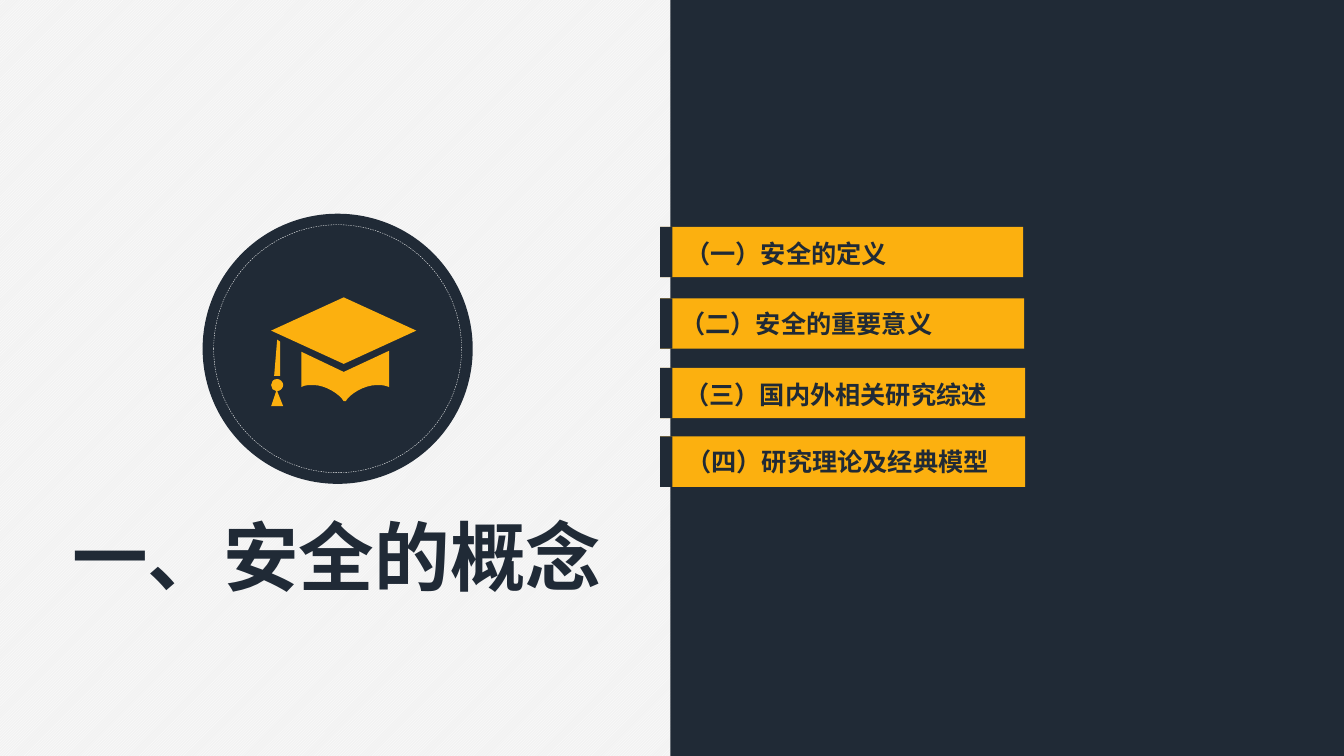
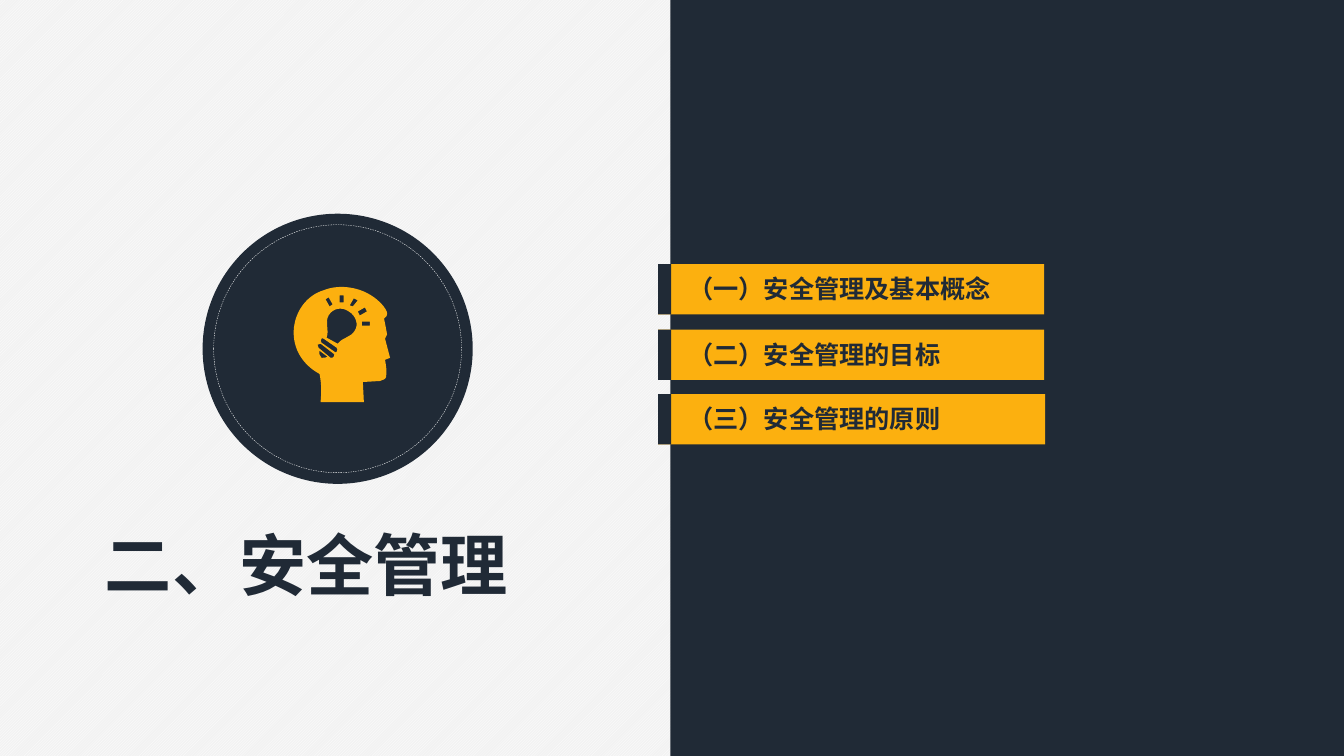
from lxml import etree
from pptx import Presentation
from pptx.dml.color import RGBColor
from pptx.enum.dml import MSO_LINE, MSO_PATTERN
from pptx.enum.shapes import MSO_SHAPE
from pptx.enum.text import MSO_ANCHOR, MSO_AUTO_SIZE, PP_ALIGN
from pptx.oxml.ns import qn
from pptx.util import Inches, Pt

NAVY = RGBColor(0x20, 0x2A, 0x36)
AMBER = RGBColor(0xFC, 0xB0, 0x0F)
WHITE = RGBColor(0xFF, 0xFF, 0xFF)
PALE = RGBColor(0xF2, 0xF2, 0xF2)
FONT = "Noto Sans CJK SC"

RECT, OVAL = MSO_SHAPE.RECTANGLE, MSO_SHAPE.OVAL
LEFT, CENTER = PP_ALIGN.LEFT, PP_ALIGN.CENTER
TOP = MSO_ANCHOR.TOP
GROW = MSO_AUTO_SIZE.SHAPE_TO_FIT_TEXT
DASH = MSO_LINE.DASH
DIAGONAL = MSO_PATTERN.LIGHT_UPWARD_DIAGONAL

SLIDE_W, SLIDE_H = 40 / 3, 7.5
PANEL_LEFT = 6.65
BADGE_BOX = (2.01, 2.12, 2.68)
RING_INSET = 0.11
BAR_H = 0.5
LABEL_H = 0.4
UNITS_PER_INCH = 100

GRADUATION_CAP = [
    [(30, 89), (33, 87, 37, 87, 42, 87), (54, 87, 68, 96, 72, 103), (74, 103),
     (78, 96, 92, 87, 105, 87), (108, 87, 113, 87, 117, 89), (117, 53), (72, 74), (30, 54)],
    [(72, 0), (0, 33), (72, 66), (144, 33)],
    [(6, 42), (3, 78), (9, 78), (9, 44)],
    [(12, 108), (6, 93), (9, 93, 12, 90, 12, 87), (12, 84, 9, 81, 6, 81),
     (2, 81, 0, 84, 0, 87), (0, 90, 2, 93, 5, 93), (0, 108)],
]
THINKING_HEAD = [
    [(41, 118), (42, 109, 42, 99, 40, 90), (0, 68, 11, 17, 44, 7), (61, 0, 85, 4, 100, 19),
     (111, 30, 106, 33, 106, 33), (104, 35), (105, 40, 107, 50, 107, 51),
     (106, 53, 105, 55, 105, 55), (110, 74), (105, 76), (106, 82, 107, 87, 106, 93),
     (106, 94, 103, 97, 100, 97), (83, 98), (84, 118)],
    [(54, 70), (41, 60), (40, 60, 39, 60, 38, 61), (38, 62, 38, 63, 39, 64),
     (51, 74), (52, 74, 54, 74, 54, 73), (55, 72, 55, 70, 54, 70)],
    [(82, 42), (90, 42), (90, 38), (82, 38)],
    [(53, 21), (49, 14), (46, 16), (50, 23)],
    [(64, 19), (64, 12), (60, 12), (60, 19)],
    [(80, 32), (87, 28), (85, 24), (78, 28)],
    [(73, 23), (78, 17), (74, 15), (70, 22)],
    [(57, 64), (44, 55), (43, 54, 42, 55, 42, 55), (41, 56, 41, 58, 42, 59),
     (55, 68), (56, 69, 57, 69, 57, 68), (58, 67, 58, 65, 57, 64)],
    [(69, 28), (62, 23, 53, 25, 49, 32), (45, 39, 50, 46, 47, 54), (58, 60),
     (62, 54, 71, 54, 75, 47), (79, 41, 76, 32, 69, 28)],
    [(40, 67), (39, 69, 40, 72, 42, 74), (44, 74, 47, 74, 48, 73)],
]

SECTIONS = [
    dict(title="一、安全的概念", title_box=(0.59, 5.01, 5.5, 1.01), title_size=54,
         icon=GRADUATION_CAP, icon_at=(2.69, 2.95), bars_left=6.55, accent_w=0.12,
         topics=[("（一）安全的定义", 2.25, 3.6, 0.15, 0.07),
                 ("（二）安全的重要意义", 2.96, 3.61, 0.1, 0.05),
                 ("（三）国内外相关研究综述", 3.65, 3.62, 0.14, 0.06),
                 ("（四）研究理论及经典模型", 4.33, 3.62, 0.16, 0.05)]),
    dict(title="二、安全管理", title_box=(0.92, 5.14, 4.24, 0.91), title_size=48,
         icon=THINKING_HEAD, icon_at=(2.77, 2.81), bars_left=6.53, accent_w=0.13,
         topics=[("（一）安全管理及基本概念", 2.62, 3.83, 0.2, 0.04),
                 ("（二）安全管理的目标", 3.27, 3.83, 0.2, 0.05),
                 ("（三）安全管理的原则", 3.91, 3.84, 0.2, 0.04)]),
]


def write_text(shape, text, size, align=LEFT):
    frame = shape.text_frame
    frame.word_wrap = False
    frame.auto_size = GROW
    frame.vertical_anchor = TOP
    frame.margin_left = frame.margin_right = Inches(0.1)
    frame.margin_top = frame.margin_bottom = Inches(0.05)
    paragraph = frame.paragraphs[0]
    paragraph.alignment = align
    run = paragraph.add_run()
    run.text = text
    run.font.size = Pt(size)
    run.font.bold = True
    run.font.color.rgb = NAVY
    run.font.name = FONT
    etree.SubElement(run._r.get_or_add_rPr(), qn("a:ea")).set("typeface", FONT)


def paint(shape, color):
    shape.shadow.inherit = False
    shape.line.fill.background()
    if color is None:
        shape.fill.background()
    else:
        shape.fill.solid()
        shape.fill.fore_color.rgb = color
    return shape


def add_block(slide, kind, left, top, width, height, color=None):
    box = [Inches(length) for length in (left, top, width, height)]
    return paint(slide.shapes.add_shape(kind, *box), color)


def pairs(part):
    return [tuple(Inches(value / UNITS_PER_INCH) for value in part[start:start + 2])
            for start in range(0, len(part), 2)]


def bend_curves(icon, outlines):
    lines = iter(list(icon._element.iter(qn("a:lnTo"))))
    for outline in outlines:
        for part in outline[1:]:
            steps = [next(lines) for _ in pairs(part)]
            if len(steps) == 3:
                curve = etree.Element(qn("a:cubicBezTo"))
                steps[0].addprevious(curve)
                for step in steps:
                    curve.append(step[0])
                    step.getparent().remove(step)


def add_icon(slide, outlines, left, top):
    builder = slide.shapes.build_freeform(*pairs(outlines[0][0])[0])
    for order, (start, *parts) in enumerate(outlines):
        if order:
            builder.move_to(*pairs(start)[0])
        builder.add_line_segments([point for part in parts for point in pairs(part)], close=True)
    icon = paint(builder.convert_to_shape(Inches(left), Inches(top)), AMBER)
    bend_curves(icon, outlines)


def add_badge(slide, left, top, diameter):
    add_block(slide, OVAL, left, top, diameter, diameter, NAVY)
    ring_d = diameter - 2 * RING_INSET
    ring = add_block(slide, OVAL, left + RING_INSET, top + RING_INSET, ring_d, ring_d)
    ring.line.color.rgb = WHITE
    ring.line.width = Pt(0.25)
    ring.line.dash_style = DASH


def add_topic(slide, left, accent_w, topic, top, width, label_dx, label_dy):
    add_block(slide, RECT, left, top, width, BAR_H, AMBER)
    add_block(slide, RECT, left, top, accent_w, BAR_H, NAVY)
    label_box = (left + label_dx, top + label_dy, width - label_dx, LABEL_H)
    label = slide.shapes.add_textbox(*[Inches(length) for length in label_box])
    write_text(label, topic, 18)


def add_title(slide, text, size, box):
    title = slide.shapes.title
    title.left, title.top, title.width, title.height = [Inches(length) for length in box]
    write_text(title, text, size, align=CENTER)


def add_section(deck, layout, section):
    slide = deck.slides.add_slide(layout)
    add_block(slide, RECT, PANEL_LEFT, 0, SLIDE_W - PANEL_LEFT, SLIDE_H, NAVY)
    for topic in section["topics"]:
        add_topic(slide, section["bars_left"], section["accent_w"], *topic)
    add_title(slide, section["title"], section["title_size"], section["title_box"])
    add_badge(slide, *BADGE_BOX)
    add_icon(slide, section["icon"], *section["icon_at"])


def main():
    deck = Presentation()
    deck.slide_width = Inches(SLIDE_W)
    deck.slide_height = Inches(SLIDE_H)
    layout = deck.slide_layouts[5]
    backdrop = layout.background.fill
    backdrop.patterned()
    backdrop.pattern = DIAGONAL
    backdrop.fore_color.rgb = WHITE
    backdrop.back_color.rgb = PALE
    for section in SECTIONS:
        add_section(deck, layout, section)
    deck.save("out.pptx")


if __name__ == "__main__":
    main()
